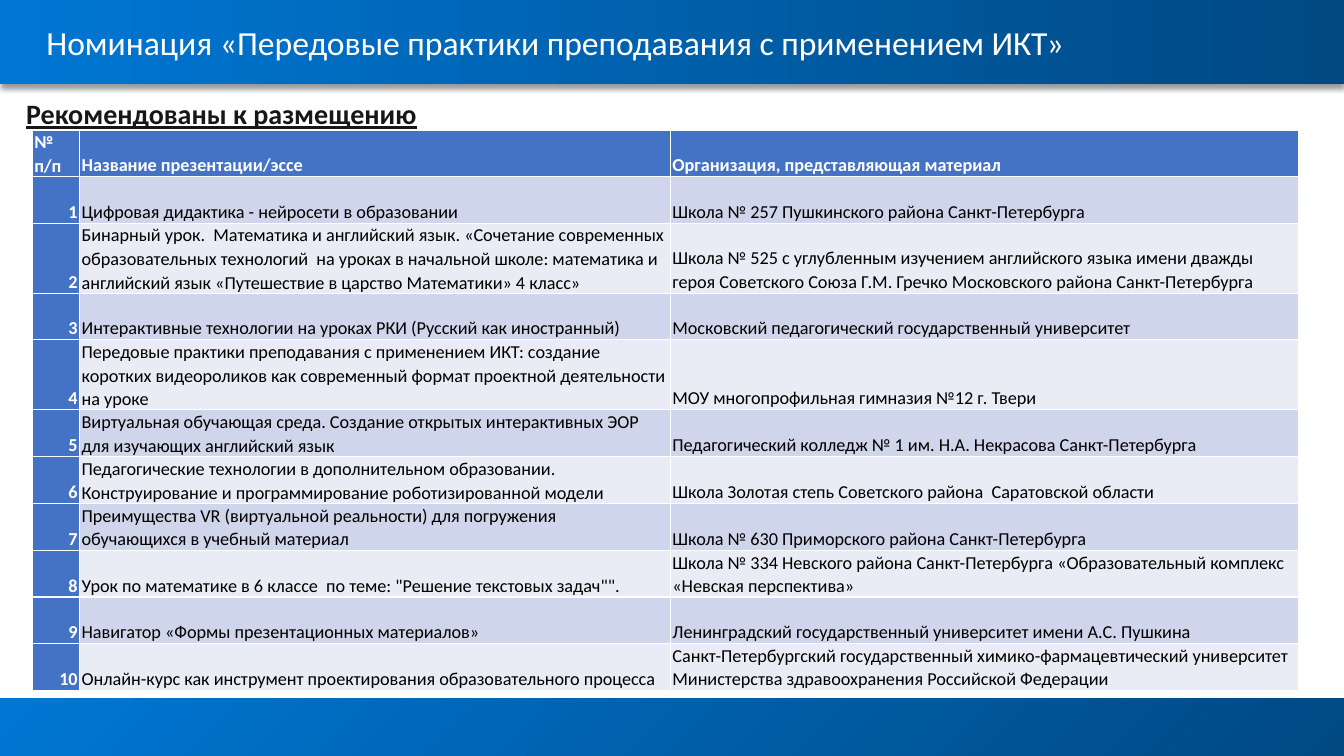
from lxml.etree import SubElement
from pptx import Presentation
from pptx.dml.color import RGBColor
from pptx.enum.shapes import MSO_SHAPE
from pptx.enum.text import MSO_ANCHOR, PP_ALIGN
from pptx.oxml.ns import qn
from pptx.util import Inches, Pt

TITLE = "Номинация «Передовые практики преподавания с применением ИКТ»"
HEADING = "Рекомендованы к размещению"
COLUMN_NAMES = ("№ п/п", "Название презентации/эссе", "Организация, представляющая материал")
ENTRIES = [
    ("Цифровая дидактика - нейросети в образовании",
     "Школа № 257 Пушкинского района Санкт-Петербурга"),
    ("Бинарный урок.  Математика и английский язык. «Сочетание современных образовательных "
     "технологий  на уроках в начальной школе: математика и английский язык "
     "«Путешествие в царство Математики» 4 класс»",
     "Школа № 525 с углубленным изучением английского языка имени дважды героя "
     "Советского Союза Г.М. Гречко Московского района Санкт-Петербурга"),
    ("Интерактивные технологии на уроках РКИ (Русский как иностранный)",
     "Московский педагогический государственный университет"),
    ("Передовые практики преподавания с применением ИКТ: создание коротких видеороликов "
     "как современный формат проектной деятельности на уроке",
     "МОУ многопрофильная гимназия №12 г. Твери"),
    ("Виртуальная обучающая среда. Создание открытых интерактивных ЭОР "
     "для изучающих английский язык",
     "Педагогический колледж № 1 им. Н.А. Некрасова Санкт-Петербурга"),
    ("Педагогические технологии в дополнительном образовании.  "
     "Конструирование и программирование роботизированной модели",
     "Школа Золотая степь Советского района  Саратовской области"),
    ("Преимущества VR (виртуальной реальности) для погружения  "
     "обучающихся в учебный материал",
     "Школа № 630 Приморского района Санкт-Петербурга"),
    ('Урок по математике в 6 классе  по теме: "Решение текстовых задач"".',
     "Школа № 334 Невского района Санкт-Петербурга "
     "«Образовательный комплекс «Невская перспектива»"),
    ("Навигатор «Формы презентационных материалов»",
     "Ленинградский государственный университет имени А.С. Пушкина"),
    ("Онлайн-курс как инструмент проектирования образовательного процесса",
     "Санкт-Петербургский государственный химико-фармацевтический университет "
     "Министерства здравоохранения Российской Федерации"),
]

WHITE = RGBColor(0xFF, 0xFF, 0xFF)
BLACK = RGBColor(0x00, 0x00, 0x00)
INK = RGBColor(0x18, 0x17, 0x17)
BRIGHT_BLUE = RGBColor(0x00, 0x77, 0xD4)
DEEP_BLUE = RGBColor(0x00, 0x49, 0x83)
TABLE_BLUE = RGBColor(0x44, 0x72, 0xC4)
BANDS = (RGBColor(0xCF, 0xD5, 0xEA), RGBColor(0xE9, 0xEB, 0xF5))

SLIDE_WIDTH, SLIDE_HEIGHT = 13.33, 7.5
HEADER_HEIGHT, FOOTER_HEIGHT = 0.83, 0.57
TABLE_LEFT, TABLE_TOP = 0.32, 1.29
COLUMN_WIDTHS = (0.47, 5.86, 6.23)
ROW_HEIGHTS = (0.2,) + (0.46,) * len(ENTRIES)
CELL_FORMAT = {
    "vertical_anchor": MSO_ANCHOR.BOTTOM,
    "margin_left": Inches(0.02), "margin_right": Inches(0.02),
    "margin_top": 0, "margin_bottom": 0,
}


def set_attributes(target, values):
    for name, value in values.items():
        setattr(target, name, value)


def write(frame, text, color, size, line_spacing, align=PP_ALIGN.LEFT, **font_format):
    paragraph = frame.paragraphs[0]
    set_attributes(paragraph, {"alignment": align, "line_spacing": line_spacing})
    run = paragraph.add_run()
    run.text = text
    set_attributes(run.font, {"name": "Calibri", "size": Pt(size), **font_format})
    run.font.color.rgb = color


def add_bar(slide, top, height, colors, angle):
    """Add a full-width gradient bar; the angle runs counter-clockwise."""
    bar = slide.shapes.add_shape(
        MSO_SHAPE.RECTANGLE, 0, Inches(top), Inches(SLIDE_WIDTH), Inches(height))
    bar.shadow.inherit = False
    bar.line.fill.background()
    bar.fill.gradient()
    bar.fill.gradient_angle = angle
    for stop, color in zip(bar.fill.gradient_stops, colors):
        stop.color.rgb = color
    return bar


def add_drop_shadow(shape):
    effects = shape.element.spPr.find(qn("a:effectLst"))
    shadow = SubElement(effects, qn("a:outerShdw"), blurRad=str(Pt(4)),
                        dist=str(Pt(3)), dir="5400000", algn="t", rotWithShape="0")
    color = SubElement(shadow, qn("a:srgbClr"), val="000000")
    SubElement(color, qn("a:alpha"), val="40000")


def add_text_frame(slide, left, top, width, height, **frame_format):
    box = slide.shapes.add_textbox(*map(Inches, (left, top, width, height)))
    set_attributes(box.text_frame, {"word_wrap": True, **frame_format})
    return box.text_frame


def add_entry_table(slide):
    rows = [COLUMN_NAMES] + [(str(number), *entry) for number, entry in enumerate(ENTRIES, 1)]
    table = slide.shapes.add_table(
        len(rows), len(COLUMN_NAMES), Inches(TABLE_LEFT), Inches(TABLE_TOP),
        Inches(sum(COLUMN_WIDTHS)), Inches(sum(ROW_HEIGHTS))).table
    table.first_col = True
    for column, width in zip(table.columns, COLUMN_WIDTHS):
        column.width = Inches(width)
    for row_index, texts in enumerate(rows):
        table.rows[row_index].height = Inches(ROW_HEIGHTS[row_index])
        for column_index, text in enumerate(texts):
            cell = table.cell(row_index, column_index)
            set_attributes(cell, CELL_FORMAT)
            is_header = row_index == 0
            is_label = is_header or column_index == 0
            cell.fill.solid()
            cell.fill.fore_color.rgb = TABLE_BLUE if is_label else BANDS[(row_index - 1) % 2]
            is_number = is_label and not is_header
            write(cell.text_frame, text, WHITE if is_label else BLACK, 13, 1.07,
                  PP_ALIGN.RIGHT if is_number else PP_ALIGN.LEFT, bold=is_label)


def main():
    presentation = Presentation()
    presentation.slide_width = Inches(SLIDE_WIDTH)
    presentation.slide_height = Inches(SLIDE_HEIGHT)
    slide = presentation.slides.add_slide(presentation.slide_layouts[6])

    add_bar(slide, SLIDE_HEIGHT - FOOTER_HEIGHT, FOOTER_HEIGHT, (DEEP_BLUE, BRIGHT_BLUE), 135)
    add_drop_shadow(add_bar(slide, 0, HEADER_HEIGHT, (BRIGHT_BLUE, DEEP_BLUE), 0))

    heading = add_text_frame(slide, 0.16, 0.95, 13.01, 5.73)
    write(heading, HEADING, INK, 20, 0.9, bold=True, underline=True)
    title = add_text_frame(
        slide, 0.46, 0.17, 12.41, 0.5, vertical_anchor=MSO_ANCHOR.MIDDLE,
        margin_left=0, margin_right=0, margin_top=0, margin_bottom=0)
    write(title, TITLE, WHITE, 24, Pt(27.8))
    add_entry_table(slide)

    presentation.save("out.pptx")


if __name__ == "__main__":
    main()
